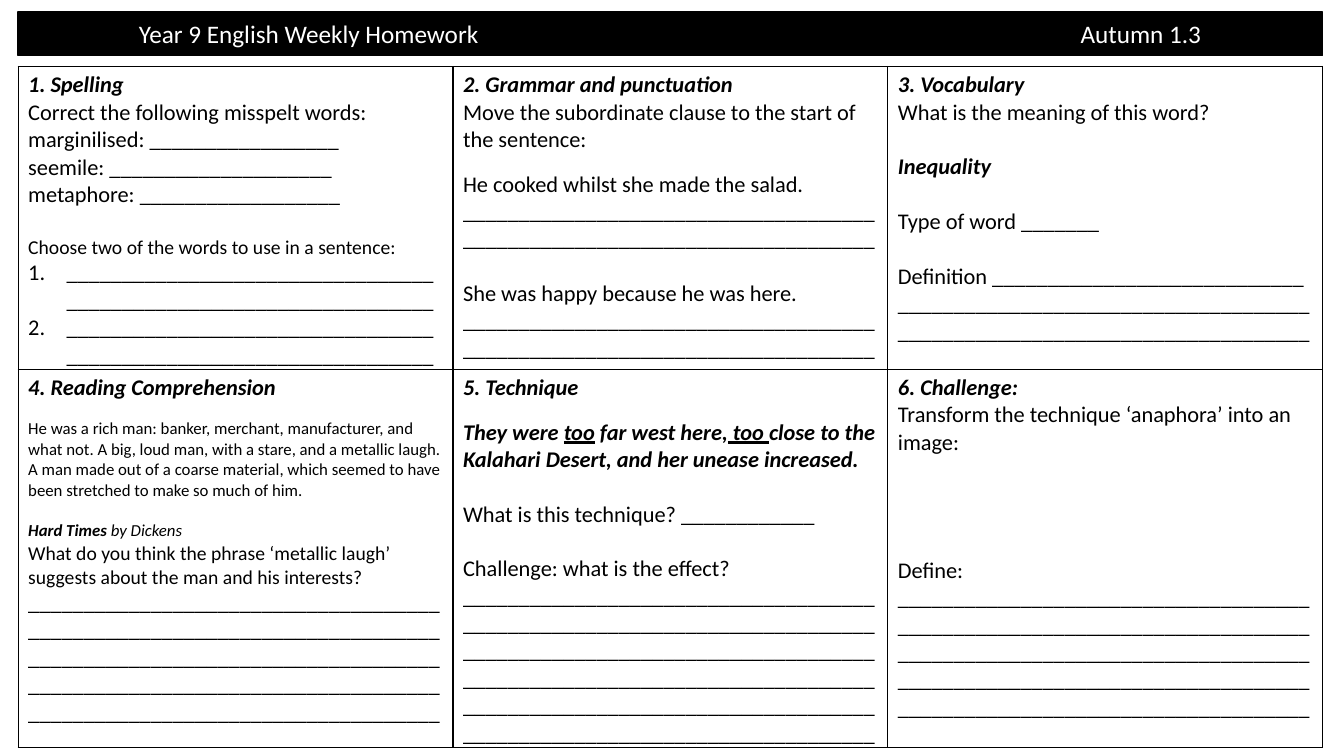
from lxml.etree import SubElement
from pptx import Presentation
from pptx.dml.color import RGBColor
from pptx.enum.shapes import MSO_SHAPE
from pptx.enum.text import MSO_ANCHOR, PP_ALIGN
from pptx.oxml import parse_xml
from pptx.oxml.ns import qn
from pptx.util import Inches, Pt

FONT = "Calibri"
BLACK, WHITE = "000000", "FFFFFF"
BODY = 16
LINE = 19.5  # height of one body line in points
DRAWING = "http://schemas.openxmlformats.org/drawingml/2006/main"


def rule(lines, width=37):
    """Underscores that fill a number of writing lines."""
    return "_" * (lines * width)


def line(*spans, size=BODY, gap=0, numbered=False):
    """One paragraph; a span is plain text or a (text, style letters) pair."""
    pairs = [(span, "") if isinstance(span, str) else span for span in spans]
    return {"spans": pairs, "size": size, "gap": gap, "numbered": numbered}


def heading(text):
    return line((text, "bi"))


TASKS = [
    [
        [
            heading("1. Spelling"),
            line("Correct the following misspelt words:"),
            line("marginilised: " + rule(1, 17)),
            line("seemile: " + rule(1, 20)),
            line("metaphore: " + rule(1, 18)),
            line("Choose two of the words to use in a sentence:", size=14, gap=LINE),
            line(rule(2, 33), numbered=True),
            line(rule(2, 33), numbered=True),
        ],
        [
            heading("2. Grammar and punctuation"),
            line("Move the subordinate clause to the start of the sentence:"),
            line("He cooked whilst she made the salad.", gap=12.2),
            line(rule(2)),
            line("She was happy because he was here.", gap=LINE),
            line(rule(2)),
        ],
        [
            heading("3. Vocabulary"),
            line("What is the meaning of this word?"),
            line(("Inequality", "bi"), gap=LINE),
            line("Type of word " + rule(1, 7), gap=LINE),
            line("Definition " + rule(1, 28) + " " + rule(2), gap=LINE),
        ],
    ],
    [
        [
            heading("4. Reading Comprehension"),
            line("He was a rich man: banker, merchant, manufacturer, and what not. "
                 "A big, loud man, with a stare, and a metallic laugh. A man made out "
                 "of a coarse material, which seemed to have been stretched to make "
                 "so much of him.", size=12, gap=12.2),
            line(("Hard Times ", "bi"), ("by Dickens", "i"), size=12, gap=14.6),
            line("What do you think the phrase ‘metallic laugh’ suggests about "
                 "the man and his interests?", size=14),
            line(rule(5)),
        ],
        [
            heading("5. Technique"),
            line(("They were ", "bi"), ("too", "biu"), (" far west here,", "bi"),
                 (" too ", "biu"),
                 ("close to the Kalahari Desert, and her unease increased.", "bi"),
                 gap=12.2),
            line("What is this technique? " + rule(1, 12), gap=LINE),
            line("Challenge: what is the effect? " + rule(6), gap=LINE),
        ],
        [
            heading("6. Challenge:"),
            line("Transform the technique ‘anaphora’ into an image:"),
            line("Define: " + rule(5), gap=3 * LINE + 13.4),
        ],
    ],
]


def colour(value):
    return RGBColor.from_string(value)


def add_span(para, text, size, shade, style=""):
    span = para.add_run()
    span.text = text
    font = span.font
    font.name, font.size = FONT, Pt(size)
    font.color.rgb = colour(shade)
    font.bold, font.italic, font.underline = ("b" in style, "i" in style, "u" in style)


def number_paragraph(para):
    properties = para._p.get_or_add_pPr()
    properties.set("marL", str(Inches(0.38)))
    properties.set("indent", str(-Inches(0.38)))
    SubElement(properties, qn("a:buFont"), typeface="+mj-lt")
    SubElement(properties, qn("a:buAutoNum"), type="arabicPeriod")


def add_banner(page, left_text, right_text):
    banner = page.shapes.add_shape(MSO_SHAPE.RECTANGLE, Inches(0.18), Inches(0.12),
                                   Inches(12.94), Inches(0.43))
    banner.shadow.inherit = False
    banner.fill.solid()
    banner.fill.fore_color.rgb = colour(BLACK)
    banner.line.color.rgb = colour(BLACK)
    banner.line.width = Pt(1)
    banner.text_frame.vertical_anchor = MSO_ANCHOR.MIDDLE
    para = banner.text_frame.paragraphs[0]
    para.alignment = PP_ALIGN.LEFT
    # Tab stops place the title and the term
    stops = SubElement(para._p.get_or_add_pPr(), qn("a:tabLst"))
    for position in (1.1, 10.44):
        SubElement(stops, qn("a:tab"), pos=str(Inches(position)), algn="l")
    add_span(para, f"\t{left_text}\t{right_text}", 18, WHITE)


def add_borders(cell):
    properties = cell._tc.get_or_add_tcPr()
    for index, side in enumerate(("lnL", "lnR", "lnT", "lnB")):
        properties.insert(index, parse_xml(
            f'<a:{side} xmlns:a="{DRAWING}" w="{Pt(1)}"><a:solidFill>'
            f'<a:srgbClr val="{BLACK}"/></a:solidFill></a:{side}>'))


def fill_cell(cell, lines):
    cell.fill.background()
    cell.margin_bottom = Inches(0)  # the last writing line sits on the border
    add_borders(cell)
    frame = cell.text_frame
    for index, item in enumerate(lines):
        para = frame.add_paragraph() if index else frame.paragraphs[0]
        if item["gap"]:
            para.space_before = Pt(item["gap"])
        if item["numbered"]:
            number_paragraph(para)
        for text, style in item["spans"]:
            add_span(para, text, item["size"], BLACK, style)


def add_task_table(page, tasks):
    table = page.shapes.add_table(len(tasks), len(tasks[0]), Inches(0.18), Inches(0.66),
                                  Inches(12.94), Inches(6.73)).table
    table.first_row = table.horz_banding = False
    for row, height in zip(table.rows, (3.0, 3.73)):
        row.height = Inches(height)
    for row_index, row_tasks in enumerate(tasks):
        for column_index, lines in enumerate(row_tasks):
            fill_cell(table.cell(row_index, column_index), lines)


def main():
    deck = Presentation()
    deck.slide_width, deck.slide_height = Inches(13.33), Inches(7.5)
    page = deck.slides.add_slide(deck.slide_layouts[6])
    add_banner(page, "Year 9 English Weekly Homework", "Autumn 1.3")
    add_task_table(page, TASKS)
    deck.save("out.pptx")


if __name__ == "__main__":
    main()
